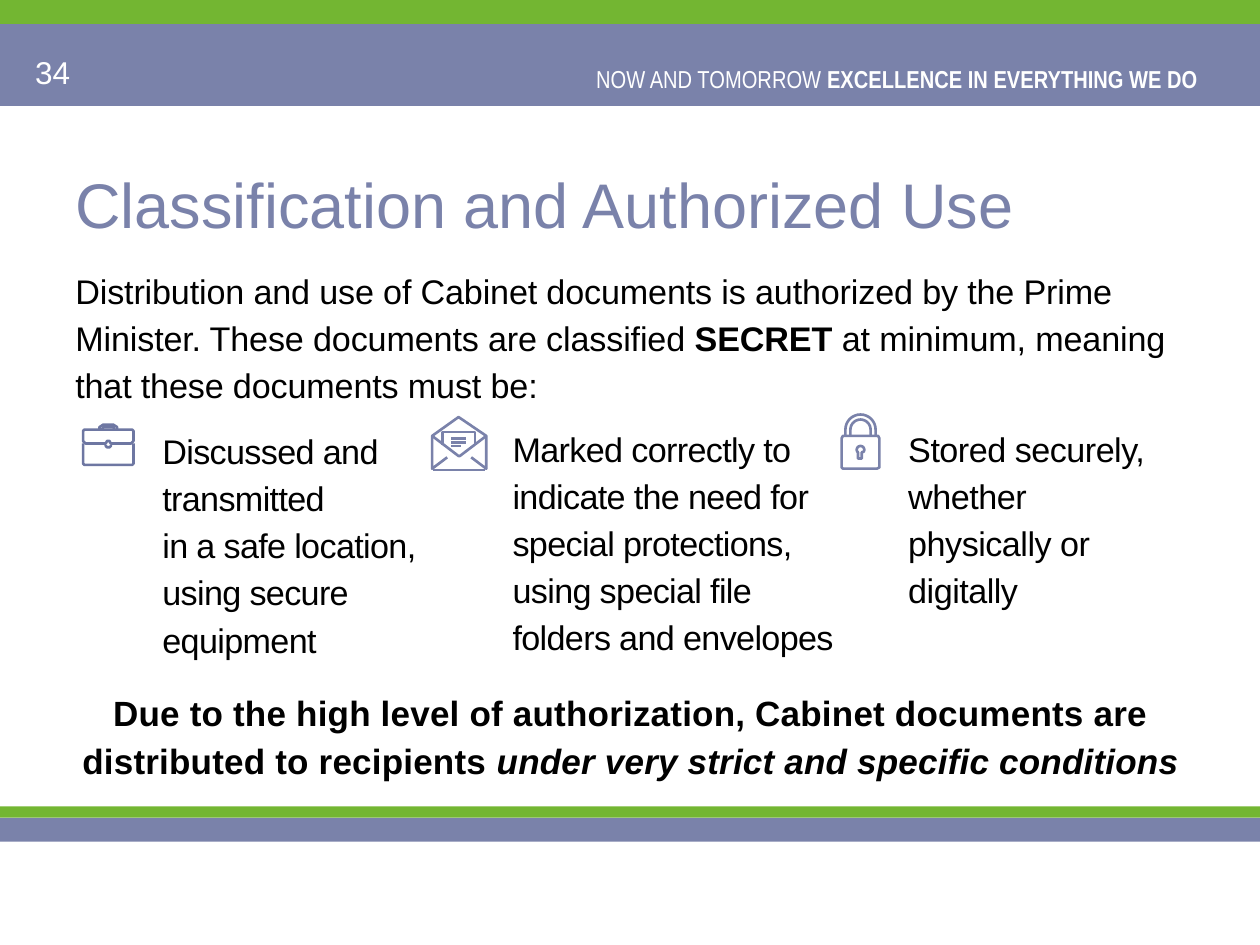
"""Build the slide on classification and authorized use of Cabinet documents."""
from math import cos, radians, sin

from lxml.etree import SubElement
from pptx import Presentation
from pptx.dml.color import RGBColor
from pptx.enum.shapes import MSO_CONNECTOR as CONN, MSO_SHAPE as SHAPE
from pptx.enum.text import MSO_ANCHOR as ANCHOR, PP_ALIGN as ALIGN
from pptx.oxml.ns import qn
from pptx.util import Inches, Pt

COLORS = {"slate": "7A82AA", "green": "73B632", "case": "6E77A2",
          "white": "FFFFFF", "black": "000000"}

BARS = [(0.19, 0.65, "slate"), (0, 0.19, "green"),
        (6.49, 0.19, "slate"), (6.4, 0.09, "green")]

HEADER = [[("NOW AND TOMORROW ", ""), ("EXCELLENCE IN EVERYTHING WE DO ", "b")]]
TITLE = [[("Classification and Authorized Use", "")]]
INTRO = [
    [("Distribution and use of Cabinet documents is authorized by the Prime "
      "Minister. These documents are classified ", ""),
     ("SECRET ", "b"), ("at minimum, meaning", "")],
    [("that these documents must be:", "")],
]
CLOSING = [[("Due to the high level of authorization, Cabinet documents are "
             "distributed to recipients ", "b"),
            ("under very strict and specific conditions", "bi")]]
COLUMNS = [
    ((1.19, 3.32, 2.29, 1.91), 0, -0.4,
     ["Discussed and transmitted", "in a safe location, using secure equipment"]),
    ((3.77, 3.3, 3.06, 2.4), 0.2, -0.4,
     ["Marked correctly to indicate the need for special protections,",
      "using special file folders and envelopes"]),
    ((7.11, 3.3, 2.22, 1.54), 0, -0.3,
     ["Stored securely, whether physically or digitally"]),
]


def arc(cx, cy, radius, start, end, steps=16):
    angles = [radians(start + (end - start) * i / steps) for i in range(steps + 1)]
    return [(cx + radius * cos(a), cy + radius * sin(a)) for a in angles]


def shackle(radius):
    return [(6.83 - radius, 3.46), *arc(6.83, 3.41, radius, 180, 360),
            (6.83 + radius, 3.46)]


CASE_FLAP = [(0.67, 3.41), (1.05, 3.41), (1.06, 3.42), (1.06, 3.5), (1.04, 3.52),
             (0.88, 3.52), (0.87, 3.5), (0.85, 3.5), (0.84, 3.52), (0.68, 3.52),
             (0.66, 3.5), (0.66, 3.42)]
CASE_HANDLES = [
    [(0.79, 3.41), (0.79, 3.39), (0.82, 3.37), (0.9, 3.37), (0.93, 3.39), (0.93, 3.41)],
    [(0.81, 3.41), (0.82, 3.39), (0.9, 3.39), (0.91, 3.41)],
]
CASE_CLASP = [(0.84, 3.53), (0.84, 3.54), (0.85, 3.55), (0.87, 3.55), (0.88, 3.54),
              (0.88, 3.53)]
CASE_BODY = [(0.66, 3.52), (0.66, 3.68), (0.67, 3.69), (1.05, 3.69), (1.06, 3.68),
             (1.06, 3.52)]
LOCK_BODY = [(6.69, 3.46), (6.97, 3.46), (6.98, 3.48), (6.98, 3.71), (6.96, 3.72),
             (6.69, 3.72), (6.68, 3.71), (6.68, 3.48)]
KEYHOLE = [(6.81, 3.64), (6.81, 3.59), *arc(6.83, 3.57, 0.03, 150, 390),
           (6.84, 3.59), (6.84, 3.64)]
ENVELOPE = [(3.74, 3.63), (3.86, 3.72), (3.86, 3.46), (3.64, 3.31), (3.43, 3.46),
            (3.43, 3.72), (3.55, 3.63)]
FLAP = [(3.86, 3.46), (3.65, 3.62), (3.64, 3.62), (3.43, 3.46)]
LETTER = [(3.51, 3.53), (3.51, 3.43), (3.77, 3.43), (3.77, 3.53)]

OUTLINES = [
    ("case", [(CASE_FLAP, True)] + [(h, False) for h in CASE_HANDLES]),
    ("case", [(CASE_CLASP, False)]),
    ("case", [(CASE_BODY, False)]),
    ("slate", [(LOCK_BODY, True), (shackle(0.12), False),
               (shackle(0.08), False), (KEYHOLE, True)]),
    ("slate", [(ENVELOPE, False)]),
    ("slate", [(FLAP, False)]),
    ("slate", [(LETTER, False)]),
]
ENVELOPE_LINES = [(3.44, 3.85, 3.73), (3.58, 3.7, 3.48), (3.58, 3.7, 3.51),
                  (3.58, 3.66, 3.54)]


def rgb(name):
    return RGBColor.from_string(COLORS[name])


def add_text(slide, box, paragraphs, size, color="black", font="Arial",
             align=ALIGN.LEFT, anchor=ANCHOR.TOP, spacing=1.0, track=0, indent=0):
    tf = slide.shapes.add_textbox(*map(Inches, box)).text_frame
    tf.word_wrap = True
    tf.vertical_anchor = anchor
    for i, runs in enumerate(paragraphs):
        p = tf.add_paragraph() if i else tf.paragraphs[0]
        p.alignment = align
        p.line_spacing = spacing
        if indent:
            p._p.get_or_add_pPr().set("marL", str(Inches(indent)))
        for text, style in runs:
            r = p.add_run()
            r.text = text
            r.font.name, r.font.size = font, Pt(size)
            r.font.bold, r.font.italic = "b" in style, "i" in style
            r.font.color.rgb = rgb(color)
            if track:
                r._r.get_or_add_rPr().set("spc", str(round(track * 100)))


def add_bar(slide, top, height, color):
    sp = slide.shapes.add_shape(SHAPE.RECTANGLE, 0, Inches(top), Inches(10),
                                Inches(height))
    sp.shadow.inherit = False
    sp.fill.solid()
    sp.fill.fore_color.rgb = rgb(color)
    sp.line.fill.background()


def add_outline(slide, color, contours):
    points = [([(Inches(x), Inches(y)) for x, y in c], closed) for c, closed in contours]
    builder = slide.shapes.build_freeform(*points[0][0][0])
    for i, (contour, closed) in enumerate(points):
        if i:
            builder.move_to(*contour[0])
        builder.add_line_segments(contour[1:], close=closed)
    sp = builder.convert_to_shape()
    sp.shadow.inherit = False
    sp.fill.background()
    sp.line.color.rgb, sp.line.width = rgb(color), Pt(1.5)


def add_line(slide, left, right, y):
    line = slide.shapes.add_connector(CONN.STRAIGHT, *map(Inches, (left, y, right, y)))
    line.line.color.rgb, line.line.width = rgb("slate"), Pt(1.5)
    SubElement(line._element.spPr, qn("a:effectLst"))


def main():
    prs = Presentation()
    prs.slide_width, prs.slide_height = Inches(10), Inches(7.5)
    s = prs.slides.add_slide(prs.slide_layouts[6])
    for bar in BARS:
        add_bar(s, *bar)
    add_text(s, (4.6, 0.46, 5.05, 0.34), HEADER, 14, color="white",
             font="Arial Narrow", align=ALIGN.RIGHT)
    add_text(s, (0.18, 0.37, 2.33, 0.4), [[("34", "")]], 18, color="white")
    add_text(s, (0.5, 0.99, 9, 1.25), TITLE, 36, color="slate", anchor=ANCHOR.MIDDLE)
    add_text(s, (0.5, 2.05, 9.36, 2.9), INTRO, 19.5, spacing=1.15, track=-0.1)
    for box, indent, track, lines in COLUMNS:
        add_text(s, box, [[(line, "")] for line in lines], 19.5, spacing=1.15,
                 track=track, indent=indent)
    add_text(s, (0.5, 5.39, 9.01, 0.84), CLOSING, 20, align=ALIGN.CENTER,
             spacing=1.15, track=0.1)
    for outline in OUTLINES:
        add_outline(s, *outline)
    for line in ENVELOPE_LINES:
        add_line(s, *line)
    prs.save("out.pptx")


if __name__ == "__main__":
    main()
